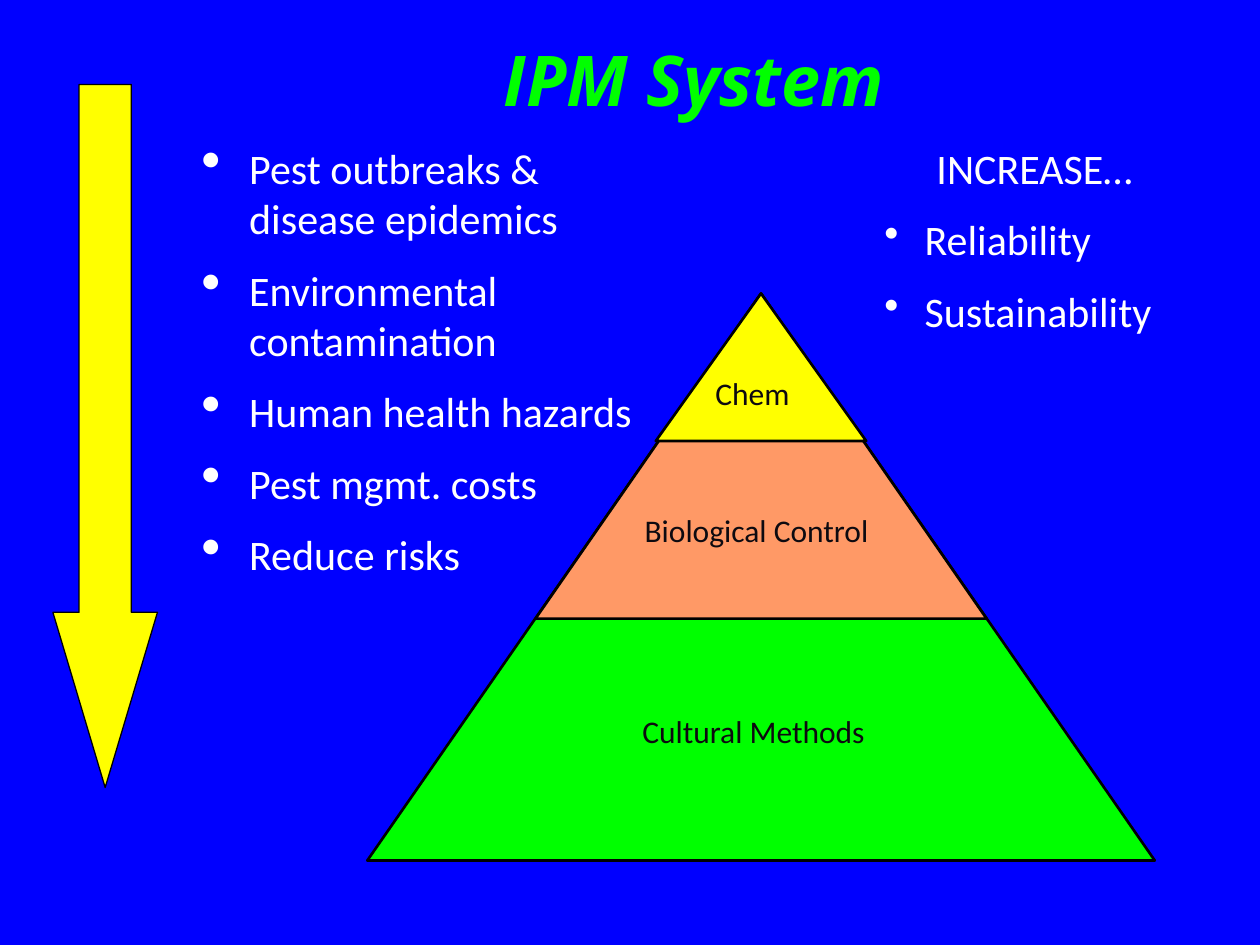
from pptx import Presentation
from pptx import util as u
from pptx.dml.color import RGBColor
from pptx.enum import shapes, text
from pptx.oxml import parse_xml
from pptx.oxml.ns import nsdecls

Inches, Pt = u.Inches, u.Pt
rgb = RGBColor.from_string
CENTER, LEFT = text.PP_ALIGN.CENTER, text.PP_ALIGN.LEFT


def add_shape(kind, x, y, w, h, fill, line_width):
    sp = s.shapes.add_shape(kind, Inches(x), Inches(y), Inches(w), Inches(h))
    sp.shadow.inherit = False
    sp.fill.solid()
    sp.fill.fore_color.rgb = rgb(fill)
    sp.line.color.rgb = rgb("000000")
    sp.line.width = Pt(line_width)
    return sp


def add_text(x, y, w, h, lines, size, color, align=LEFT):
    tf = s.shapes.add_textbox(Inches(x), Inches(y), Inches(w), Inches(h)).text_frame
    tf.word_wrap = True
    tf.text = "\n".join(lines)
    for i, p in enumerate(tf.paragraphs):
        p.alignment = align
        p.space_before = Pt(size / 2 if i else 0)
        p.font.size = Pt(size)
        for r in p.runs:
            r.font.size = Pt(size)
            r.font.name = "Calibri"
            r.font.color.rgb = rgb(color)
    return tf.paragraphs


prs = Presentation()
prs.slide_width, prs.slide_height = Inches(10), Inches(7.5)
s = prs.slides.add_slide(prs.slide_layouts[5])
s.background.fill.solid()
s.background.fill.fore_color.rgb = rgb("0000FF")

# Title
title = s.shapes.title
title.left, title.top = Inches(2.92), Inches(0)
title.width, title.height = Inches(5.17), Inches(1.25)
tf = title.text_frame
tf.text = "IPM System"
tf.vertical_anchor = text.MSO_ANCHOR.MIDDLE
p = tf.paragraphs[0]
p.alignment = CENTER
font = p.runs[0].font
font.name, font.size = "Open Sans", Pt(40)
font.bold = font.italic = True
font.color.rgb = rgb("00FF00")

# Decrease arrow
arrow = add_shape(shapes.MSO_SHAPE.DOWN_ARROW, 0.42, 0.67, 0.83, 5.58, "FFFF00", 0.75)
arrow.adjustments[0] = 0.5
arrow.adjustments[1] = 1.675

# What goes down, and what goes up
decreases = add_text(1.5, 1.08, 3.67, 3.74, [
    "Pest outbreaks & disease epidemics",
    "Environmental contamination",
    "Human health hazards",
    "Pest mgmt. costs",
    "Reduce risks",
], 24, "FFFFFF")
increases = add_text(6.67, 1.08, 3.08, 1.72,
                     ["INCREASE…", "Reliability", "Sustainability"], 24, "FFFFFF")
increases[0].alignment = CENTER

# Bullets: paragraphs, left margin, hanging indent, bullet size in percent
for paragraphs, margin, hang, percent in [
    (decreases, 0.38, 0.38, 135),
    (increases[1:], 0.57, 0.32, 100),
]:
    for p in paragraphs:
        pPr = p._p.get_or_add_pPr()
        pPr.set("marL", str(Inches(margin)))
        pPr.set("indent", str(-Inches(hang)))
        for xml in (
            '<a:buClr %s><a:srgbClr val="FFFFFF"/></a:buClr>' % nsdecls("a"),
            '<a:buSzPct %s val="%d"/>' % (nsdecls("a"), percent * 1000),
            '<a:buChar %s char="•"/>' % nsdecls("a"),
        ):
            pPr.insert_element_before(parse_xml(xml), "a:tabLst", "a:defRPr", "a:extLst")

# Pyramid: triangles that share one apex, largest at the back
apex_x, apex_y = 6.04, 2.33
for w, h, fill in [
    (6.25, 4.5, "00FF00"),
    (3.58, 2.58, "FF9966"),
    (1.67, 1.17, "FFFF00"),
]:
    add_shape(shapes.MSO_SHAPE.ISOSCELES_TRIANGLE, apex_x - w / 2, apex_y, w, h, fill, 1.5)

# Pyramid labels
for label, x, y, w, align in [
    ("Cultural Methods", 5, 5.6, 2, LEFT),
    ("Biological Control", 4.92, 4.01, 2.17, CENTER),
    ("Chem", 5.58, 2.92, 1.17, LEFT),
]:
    add_text(x, y, w, 0.4, [label], 18, "0D0A10", align)

prs.save("out.pptx")
